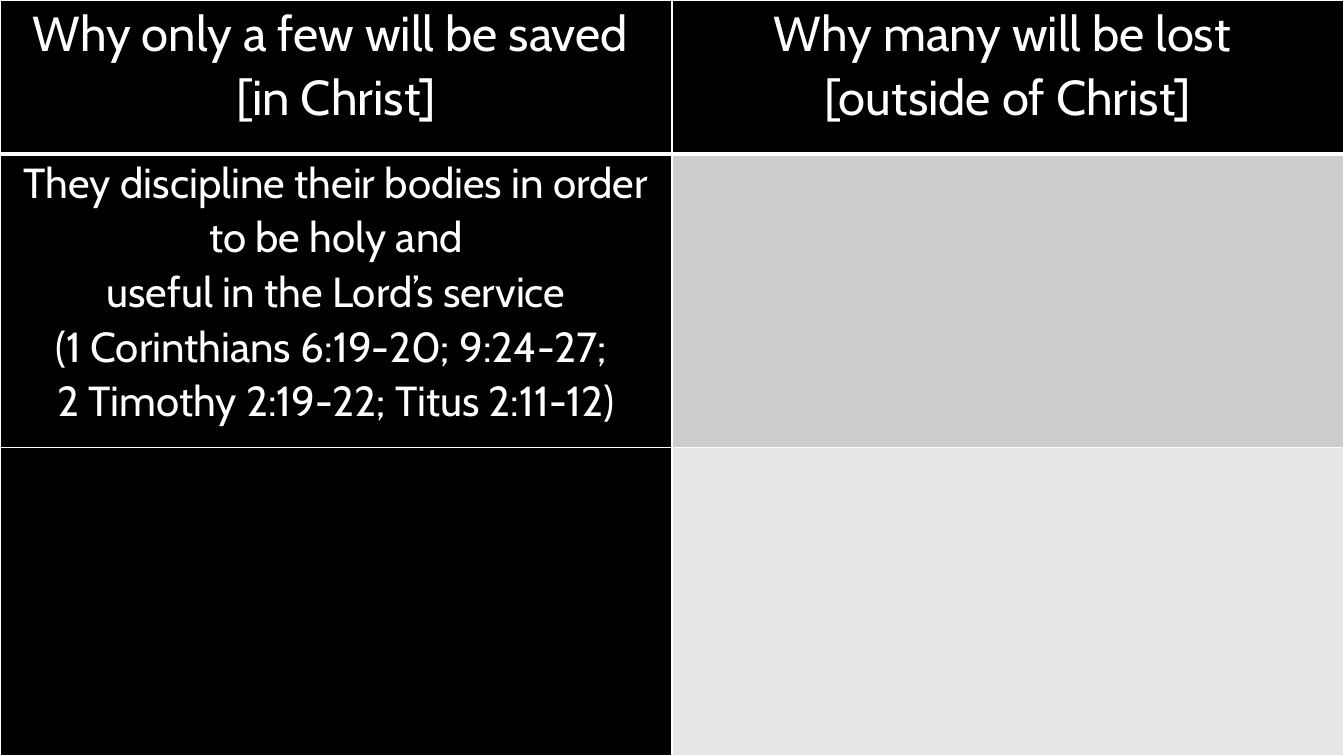
from pptx import Presentation
from pptx import util as u
from pptx.dml.color import RGBColor
from pptx.enum import text
from pptx.oxml import parse_xml
from pptx.oxml.ns import nsdecls

BLACK = RGBColor(0x00, 0x00, 0x00)
WHITE = RGBColor(0xFF, 0xFF, 0xFF)
GREY = RGBColor(0xCC, 0xCC, 0xCC)
LIGHT_GREY = RGBColor(0xE7, 0xE7, 0xE7)

WIDTH, HEIGHT = u.Inches(13.33), u.Inches(7.5)
ROW_SHARES = (0.204, 0.388, 0.408)
FILLS = ((BLACK, BLACK), (BLACK, GREY), (BLACK, LIGHT_GREY))

HEADINGS = (
    ("Why only a few will be saved ", "[in Christ]"),
    ("Why many will be lost ", "[outside of Christ]"),
)
DISCIPLINE = (
    "They discipline their bodies in order to be holy and",
    "useful in the Lord’s service",
    "(1 Corinthians 6:19-20; 9:24-27; ",
    "2 Timothy 2:19-22; Titus 2:11-12)",
)


def write_text(cell, lines, size, color=WHITE, font="Cabin", spacing=1.07):
    """Write each line as a centred paragraph of the cell."""
    frame = cell.text_frame
    for index, line in enumerate(lines):
        paragraph = frame.add_paragraph() if index else frame.paragraphs[0]
        paragraph.alignment = text.PP_ALIGN.CENTER
        paragraph.line_spacing = spacing
        run = paragraph.add_run()
        run.text = line
        run.font.name = font
        run.font.size = u.Pt(size)
        run.font.bold = False
        run.font.color.rgb = color


def set_borders(cell, top=1, bottom=1, color=WHITE):
    """Draw the four cell borders, with widths in points."""
    properties = cell._tc.get_or_add_tcPr()
    widths = {"lnL": 1, "lnR": 1, "lnT": top, "lnB": bottom}
    for position, (side, width) in enumerate(widths.items()):
        properties.insert(position, parse_xml(
            f'<a:{side} {nsdecls("a")} w="{u.Pt(width)}"><a:solidFill>'
            f'<a:srgbClr val="{color}"/></a:solidFill></a:{side}>'))


def add_comparison_table(slide):
    rows, columns = len(FILLS), len(FILLS[0])
    table = slide.shapes.add_table(rows, columns, 0, 0, WIDTH, HEIGHT).table
    for row, share in zip(table.rows, ROW_SHARES):
        row.height = int(HEIGHT * share)
    for row, fills in enumerate(FILLS):
        for column, fill in enumerate(fills):
            cell = table.cell(row, column)
            cell.fill.solid()
            cell.fill.fore_color.rgb = fill
            cell.margin_left = cell.margin_right = u.Inches(0.07)
            cell.margin_top = cell.margin_bottom = 0
            set_borders(cell, top=3 if row == 1 else 1,
                        bottom=3 if row == 0 else 1)
    return table


def main():
    presentation = Presentation()
    presentation.slide_width, presentation.slide_height = WIDTH, HEIGHT
    slide = presentation.slides.add_slide(presentation.slide_layouts[6])
    slide.background.fill.solid()
    slide.background.fill.fore_color.rgb = BLACK

    table = add_comparison_table(slide)
    for column, heading in enumerate(HEADINGS):
        write_text(table.cell(0, column), heading, size=35)
    write_text(table.cell(1, 0), DISCIPLINE, size=30)

    presentation.save("out.pptx")


if __name__ == "__main__":
    main()
